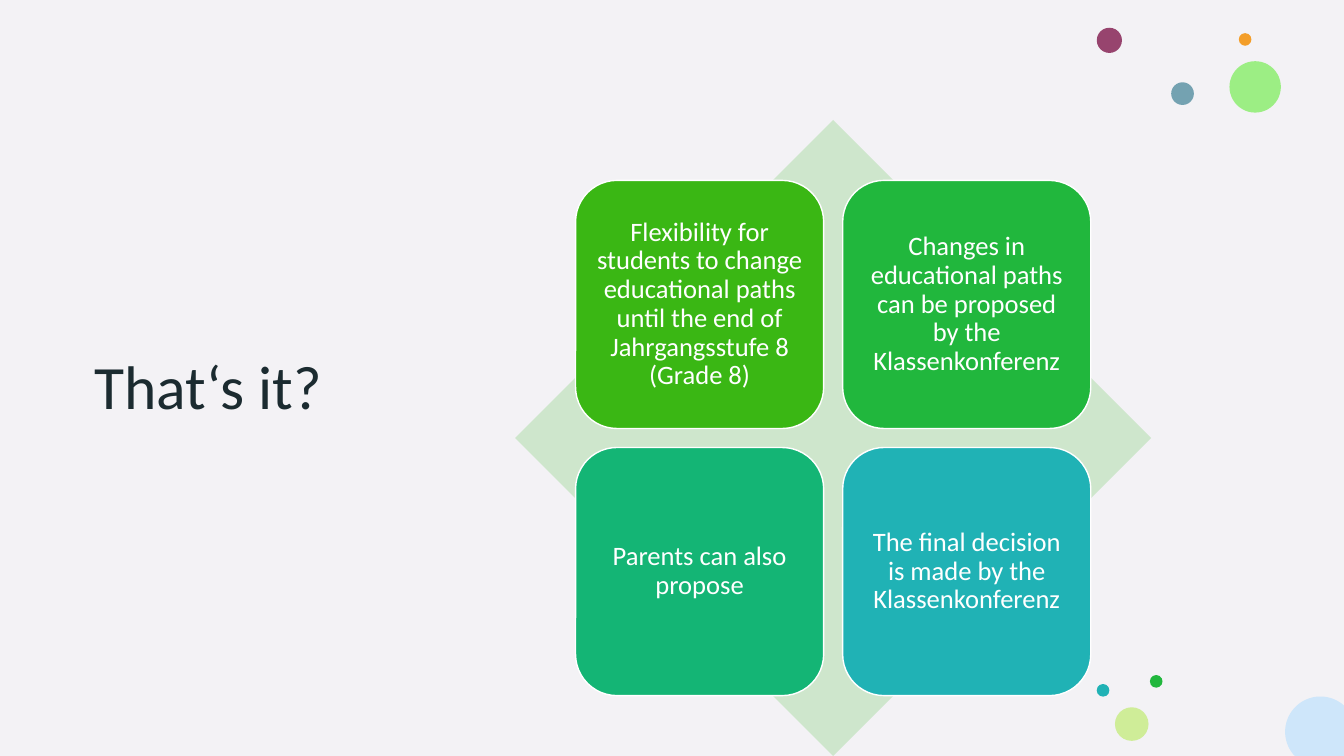
from dataclasses import dataclass
from math import cos, radians, sin

from lxml import etree
from pptx import Presentation
from pptx.dml.color import RGBColor
from pptx.enum.shapes import MSO_SHAPE
from pptx.enum.text import MSO_ANCHOR, PP_ALIGN
from pptx.oxml.ns import qn
from pptx.util import Pt

OVAL, DIAMOND, TILE = MSO_SHAPE.OVAL, MSO_SHAPE.DIAMOND, MSO_SHAPE.ROUNDED_RECTANGLE
MIDDLE, CENTER = MSO_ANCHOR.MIDDLE, PP_ALIGN.CENTER
SLIDE_W, SLIDE_H = 960, 540
MATRIX_LEFT, MATRIX_TOP, MATRIX_SIZE = 368, 85.7, 454.3
TILE_SIZE, TILE_PITCH, TILE_INSET = 177.2, 190.8, 6


@dataclass(frozen=True)
class Theme:
    font: str = "Calibri"
    title_size: float = 44
    tile_size: float = 19
    background: str = "F3F2F5"
    title: str = "1B2B30"
    diamond: str = "CEE6CC"
    white: str = "FFFFFF"
    corner: str = "CEE6FA"


@dataclass(frozen=True)
class Bubble:
    left: float
    top: float
    size: float
    color: str
    opacity: int = 100


@dataclass(frozen=True)
class Step:
    text: str
    color: str


THEME = Theme()
BUBBLES = [
    Bubble(783.4, 19.8, 18, "97446E"),
    Bubble(878.2, 43.7, 36.7, "7BED59", 72),
    Bubble(884.9, 23.7, 9, "F39E29"),
    Bubble(836.6, 58.8, 16.2, "74A2B1"),
    Bubble(821.4, 482.2, 9, "21B73D"),
    Bubble(796.4, 505.2, 24, "CFED98"),
    Bubble(783.4, 488.6, 9, "20B2B5"),
]
STEPS = [
    Step("Flexibility for students to change educational paths until the end of "
         "Jahrgangsstufe 8 (Grade 8)", "3AB714"),
    Step("Changes in educational paths can be proposed by the Klassenkonferenz", "21B73D"),
    Step("Parents can also propose", "14B575"),
    Step("The final decision is made by the Klassenkonferenz", "20B2B5"),
]


def paint(shape, color: str) -> None:
    shape.shadow.inherit = False
    shape.fill.solid()
    shape.fill.fore_color.rgb = RGBColor.from_string(color)
    shape.line.fill.background()


def write(shape, text: str, size: float, color: str) -> None:
    frame = shape.text_frame
    frame.word_wrap = True
    frame.vertical_anchor = MIDDLE
    paragraph = frame.paragraphs[0]
    paragraph.text = text
    paragraph.line_spacing = 0.9
    paragraph.font.name = THEME.font
    paragraph.font.size = Pt(size)
    paragraph.font.color.rgb = RGBColor.from_string(color)


def draw_bubble(slide, bubble: Bubble) -> None:
    circle = slide.shapes.add_shape(
        OVAL, Pt(bubble.left), Pt(bubble.top), Pt(bubble.size), Pt(bubble.size))
    paint(circle, bubble.color)
    if bubble.opacity < 100:
        tint = circle.fill._xPr.find(".//" + qn("a:srgbClr"))
        etree.SubElement(tint, qn("a:alpha"), val=str(bubble.opacity * 1000))


def draw_corner(slide, center_x: float, center_y: float, radius: float) -> None:
    rim = [(Pt(min(center_x + radius * cos(radians(angle)), SLIDE_W)),
            Pt(min(center_y + radius * sin(radians(angle)), SLIDE_H)))
           for angle in range(0, 360, 3)]
    builder = slide.shapes.build_freeform(*rim[0])
    builder.add_line_segments(rim[1:], close=True)
    paint(builder.convert_to_shape(), THEME.corner)


def draw_step(slide, step: Step, row: int, column: int) -> None:
    margin = (MATRIX_SIZE - TILE_PITCH - TILE_SIZE) / 2
    tile = slide.shapes.add_shape(
        TILE, Pt(MATRIX_LEFT + margin + column * TILE_PITCH),
        Pt(MATRIX_TOP + margin + row * TILE_PITCH), Pt(TILE_SIZE), Pt(TILE_SIZE))
    paint(tile, step.color)
    tile.line.color.rgb = RGBColor.from_string(THEME.white)
    tile.line.width = Pt(1)
    write(tile, step.text, THEME.tile_size, THEME.white)
    frame = tile.text_frame
    frame.margin_left = frame.margin_right = Pt(TILE_INSET)
    frame.margin_top = frame.margin_bottom = Pt(TILE_INSET)
    frame.paragraphs[0].alignment = CENTER


def main() -> None:
    """Build the slide with the title and the four-part matrix."""
    deck = Presentation()
    deck.slide_width, deck.slide_height = Pt(SLIDE_W), Pt(SLIDE_H)
    slide = deck.slides.add_slide(deck.slide_layouts[6])
    slide.background.fill.solid()
    slide.background.fill.fore_color.rgb = RGBColor.from_string(THEME.background)

    title = slide.shapes.add_textbox(Pt(60.5), Pt(74.9), Pt(362.9), Pt(406))
    write(title, "That‘s it?", THEME.title_size, THEME.title)
    for bubble in BUBBLES:
        draw_bubble(slide, bubble)
    draw_corner(slide, 943.2, 522.7, 25.2)

    diamond = slide.shapes.add_shape(
        DIAMOND, Pt(MATRIX_LEFT), Pt(MATRIX_TOP), Pt(MATRIX_SIZE), Pt(MATRIX_SIZE))
    paint(diamond, THEME.diamond)
    for index, step in enumerate(STEPS):
        draw_step(slide, step, *divmod(index, 2))
    deck.save("out.pptx")


if __name__ == "__main__":
    main()
